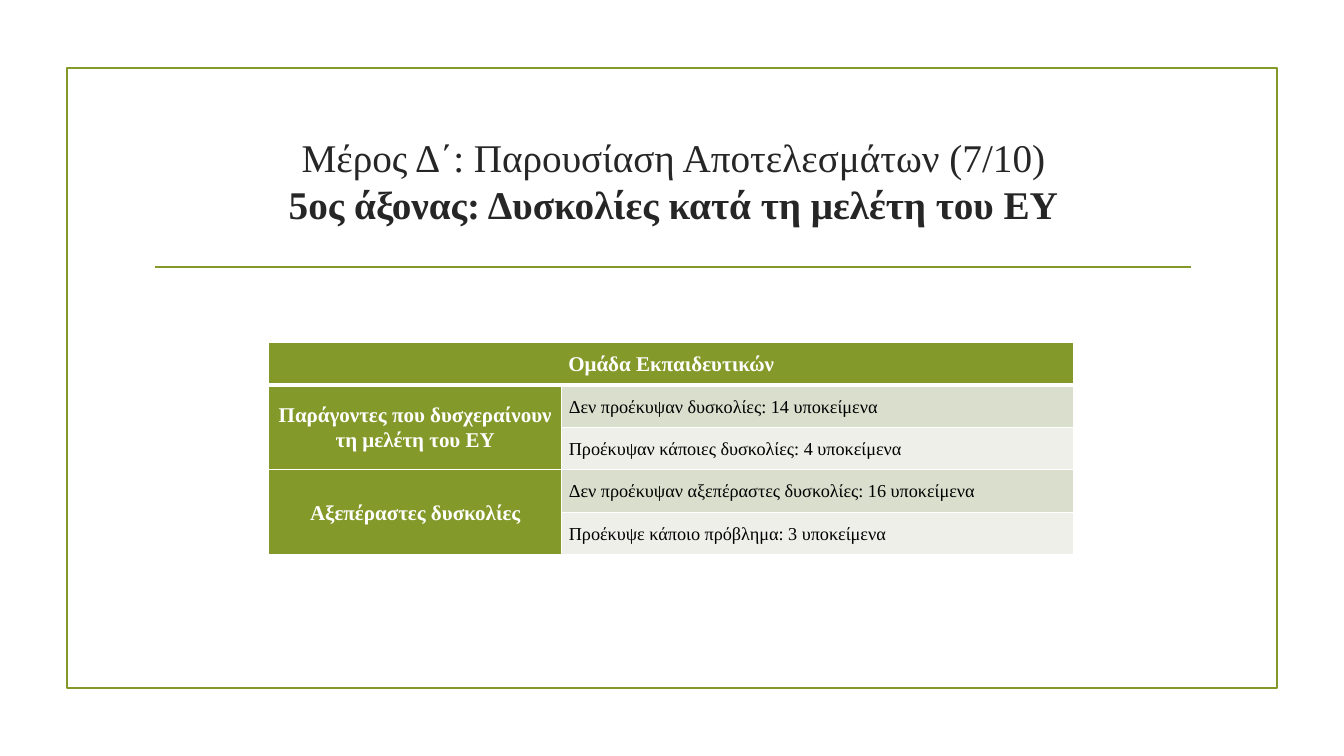
from lxml.etree import SubElement
from pptx import Presentation
from pptx.dml.color import RGBColor
from pptx.enum.shapes import MSO_CONNECTOR, MSO_SHAPE
from pptx.enum.text import MSO_ANCHOR, PP_ALIGN
from pptx.oxml.ns import qn
from pptx.util import Inches, Pt

WIDTH, HEIGHT = 13.33, 7.5
GREEN, WHITE, BLACK, DARK = "83992A", "FFFFFF", "000000", "262626"
BANDS = ["D9DECD", "EDEFE8"]
TITLE_LINES = ["Μέρος Δ΄: Παρουσίαση Αποτελεσμάτων (7/10)",
               "5ος άξονας: Δυσκολίες κατά τη μελέτη του ΕΥ"]
TABLE_HEADER = "Ομάδα Εκπαιδευτικών"
FINDINGS = {
    "Παράγοντες που δυσχεραίνουν τη μελέτη του ΕΥ": [
        "Δεν προέκυψαν δυσκολίες: 14 υποκείμενα",
        "Προέκυψαν κάποιες δυσκολίες: 4 υποκείμενα"],
    "Αξεπέραστες δυσκολίες": [
        "Δεν προέκυψαν αξεπέραστες δυσκολίες: 16 υποκείμενα",
        "Προέκυψε κάποιο πρόβλημα: 3 υποκείμενα"],
}


def color(value):
    return RGBColor.from_string(value)


class SlideBuilder:
    font_name = "Times New Roman"
    line_width = Pt(1.25)

    def __init__(self, presentation):
        self.slide = presentation.slides.add_slide(presentation.slide_layouts[5])
        self.shapes = self.slide.shapes

    def box(self, left, top, width, height):
        """Turn shares of the slide's size into lengths."""
        return (Inches(left * WIDTH), Inches(top * HEIGHT),
                Inches(width * WIDTH), Inches(height * HEIGHT))

    def style_line(self, line):
        line.color.rgb = color(GREEN)
        line.width = self.line_width

    def style_font(self, font, size, font_color, bold=None):
        font.name = self.font_name
        font.size = Pt(size)
        font.color.rgb = color(font_color)
        font.bold = bold

    def frame(self, *shares):
        shape = self.shapes.add_shape(MSO_SHAPE.RECTANGLE, *self.box(*shares))
        shape.shadow.inherit = False
        shape.fill.background()
        self.style_line(shape.line)

    def rule(self, left, right, height):
        begin_x, y, end_x, _ = self.box(left, height, right, 0)
        connector = self.shapes.add_connector(MSO_CONNECTOR.STRAIGHT, begin_x, y, end_x, y)
        self.style_line(connector.line)
        SubElement(connector._element.spPr, qn("a:effectLst"))

    def title(self, lines, *shares):
        title = self.shapes.title
        title.left, title.top, title.width, title.height = self.box(*shares)
        text_frame = title.text_frame
        text_frame.vertical_anchor = MSO_ANCHOR.MIDDLE
        text_frame.word_wrap = True
        paragraph = text_frame.paragraphs[0]
        paragraph.alignment = PP_ALIGN.CENTER
        for index, line in enumerate(lines):
            if index:
                paragraph.add_line_break()
            run = paragraph.add_run()
            run.text = line
            run.font.bold = index > 0
        self.style_font(paragraph.font, 28, DARK)

    def table(self, header, findings, column_shares, *shares):
        row_count = 1 + sum(len(details) for details in findings.values())
        table = self.shapes.add_table(row_count, 2, *self.box(*shares)).table
        for column, share in zip(table.columns, column_shares):
            column.width = Inches(share * WIDTH)
        for row_index in range(row_count):
            for column_index in range(2):
                self.cell_borders(table.cell(row_index, column_index), row_index)
        table.cell(0, 0).merge(table.cell(0, 1))
        self.heading_cell(table.cell(0, 0), header)
        row = 1
        for heading, details in findings.items():
            table.cell(row, 0).merge(table.cell(row + len(details) - 1, 0))
            self.heading_cell(table.cell(row, 0), heading)
            for detail, band in zip(details, BANDS):
                self.cell(table.cell(row, 1), detail, band, 13, BLACK, False, PP_ALIGN.LEFT)
                row += 1

    def cell_borders(self, cell, row):
        """Draw thin white borders, with a thick one under the header row."""
        thick_side = {0: "lnB", 1: "lnT"}.get(row)
        properties = cell._tc.get_or_add_tcPr()
        for side in ("lnL", "lnR", "lnT", "lnB"):
            width = Pt(3 if side == thick_side else 1)
            line = SubElement(properties, qn(f"a:{side}"), w=str(width))
            SubElement(SubElement(line, qn("a:solidFill")), qn("a:srgbClr"), val=WHITE)

    def heading_cell(self, cell, text):
        self.cell(cell, text, GREEN, 15, WHITE, True, PP_ALIGN.CENTER)

    def cell(self, cell, text, fill, size, font_color, bold, alignment):
        cell.fill.solid()
        cell.fill.fore_color.rgb = color(fill)
        cell.vertical_anchor = MSO_ANCHOR.MIDDLE
        cell.margin_left = cell.margin_right = Inches(0.07)
        cell.margin_top = cell.margin_bottom = 0
        cell.text = text
        paragraph = cell.text_frame.paragraphs[0]
        paragraph.alignment = alignment
        paragraph.line_spacing = 1.07
        self.style_font(paragraph.font, size, font_color, bold)


def main():
    presentation = Presentation()
    presentation.slide_width, presentation.slide_height = Inches(WIDTH), Inches(HEIGHT)
    builder = SlideBuilder(presentation)
    builder.frame(0.05, 0.09, 0.9, 0.82)
    builder.rule(0.115, 0.886, 0.353)
    builder.title(TITLE_LINES, 0.107, 0.143, 0.788, 0.19)
    builder.table(TABLE_HEADER, FINDINGS, (0.218, 0.381), 0.2, 0.453, 0.599, 0.281)
    presentation.save("out.pptx")


if __name__ == "__main__":
    main()
